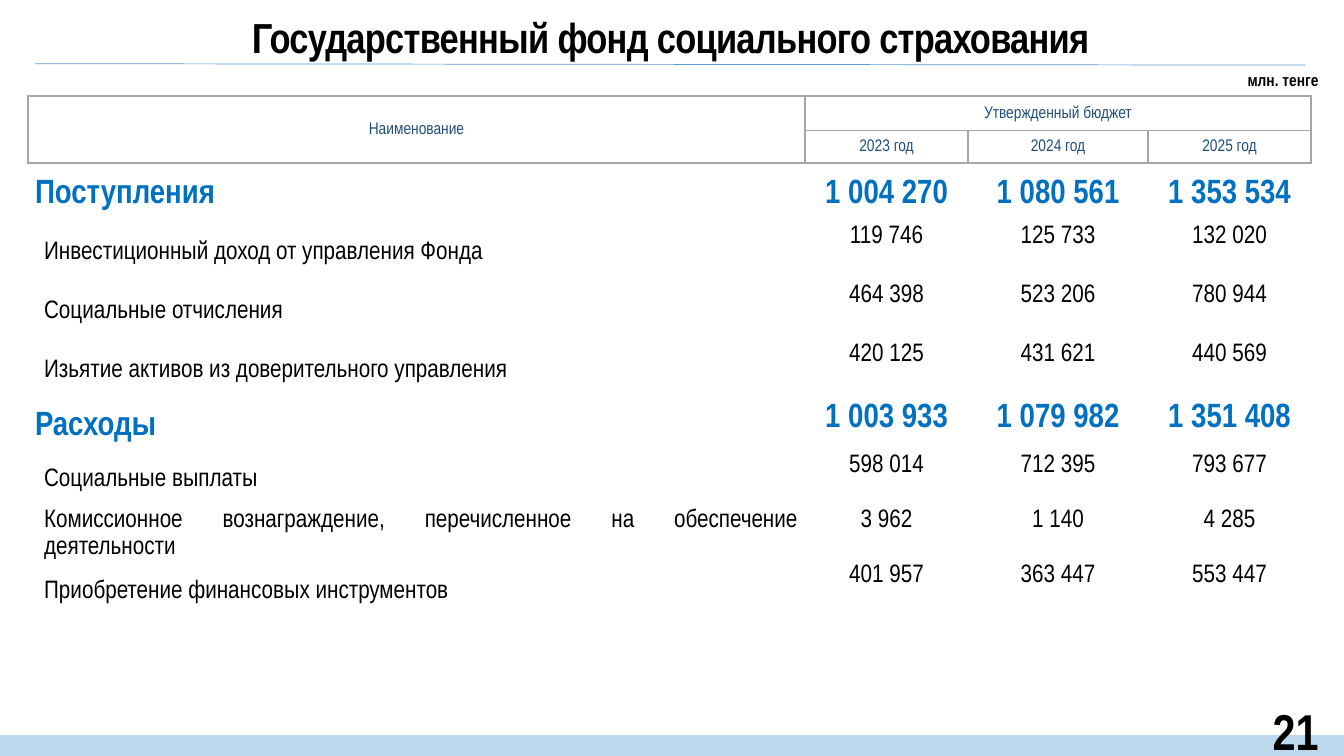
from dataclasses import dataclass
from lxml.etree import SubElement
from pptx import Presentation
from pptx.dml.color import RGBColor
from pptx.enum.shapes import MSO_CONNECTOR, MSO_SHAPE
from pptx.enum.text import MSO_ANCHOR, MSO_AUTO_SIZE, PP_ALIGN
from pptx.oxml import parse_xml
from pptx.oxml.ns import nsdecls, qn
from pptx.util import Pt


@dataclass(frozen=True)
class Theme:
    font: str = "Arial Narrow"
    text: str = "000000"
    accent: str = "0070C0"
    header: str = "1F4E79"
    border: str = "A6A6A6"
    rule: str = "5B9BD5"
    band: str = "BDD7EE"
    page_size: int = 36
    title_size: int = 30
    total_size: int = 24
    body_size: int = 18
    small_size: int = 12


class SlideBuilder:
    def __init__(self, slide, theme):
        self.slide = slide
        self.theme = theme

    def format_text(self, text_frame, size, color, bold, align, line_spacing=None):
        paragraph = text_frame.paragraphs[0]
        paragraph.alignment = align
        if line_spacing:
            paragraph.line_spacing = line_spacing
        for run in paragraph.runs:
            run.font.name = self.theme.font
            run.font.size = Pt(size)
            run.font.bold = bold
            run.font.color.rgb = RGBColor.from_string(color)

    def fill_frame(self, shape, text, size, align, line_spacing=None):
        text_frame = shape.text_frame
        text_frame.text = text
        text_frame.word_wrap = True
        text_frame.auto_size = MSO_AUTO_SIZE.NONE
        text_frame.vertical_anchor = MSO_ANCHOR.MIDDLE
        self.format_text(text_frame, size, self.theme.text, True, align, line_spacing)

    def title(self, text, left, top, width, height):
        shape = self.slide.shapes.title
        shape.left, shape.top, shape.width, shape.height = map(Pt, (left, top, width, height))
        self.fill_frame(shape, text, self.theme.title_size, PP_ALIGN.CENTER, 1.1)
        for run in shape.text_frame.paragraphs[0].runs:
            run.font._element.set("spc", "-50")

    def label(self, text, left, top, width, height, size, line_spacing=None):
        shape = self.slide.shapes.add_textbox(*map(Pt, (left, top, width, height)))
        self.fill_frame(shape, text, size, PP_ALIGN.RIGHT, line_spacing)

    def band(self, left, top, width, height):
        shape = self.slide.shapes.add_shape(
            MSO_SHAPE.RECTANGLE, *map(Pt, (left, top, width, height)))
        shape.shadow.inherit = False
        shape.fill.solid()
        shape.fill.fore_color.rgb = RGBColor.from_string(self.theme.band)
        shape.line.fill.background()

    def rule(self, *ends):
        connector = self.slide.shapes.add_connector(MSO_CONNECTOR.STRAIGHT, *map(Pt, ends))
        connector.line.color.rgb = RGBColor.from_string(self.theme.rule)
        connector.line.width = Pt(0.5)
        SubElement(connector._element.spPr, qn("a:effectLst"))

    def table(self, left, top, columns, rows):
        frame = self.slide.shapes.add_table(
            len(rows), len(columns), *map(Pt, (left, top, sum(columns), sum(rows))))
        table = frame.table
        table.first_row = table.horz_banding = False
        for column, width in zip(table.columns, columns):
            column.width = Pt(width)
        for row, height in zip(table.rows, rows):
            row.height = Pt(height)
        return table

    def cell(self, cell, text, size, color, bold, align, anchor, margins,
             line_spacing=None, sides=""):
        cell.text = text
        cell.vertical_anchor = anchor
        (cell.margin_left, cell.margin_top,
         cell.margin_right, cell.margin_bottom) = map(Pt, margins)
        cell.fill.background()
        self.format_text(cell.text_frame, size, color, bold, align, line_spacing)
        # Sides without a border get an explicit empty line
        properties = cell._tc.get_or_add_tcPr()
        for index, side in enumerate("LRTB"):
            paint = (f'<a:solidFill><a:srgbClr val="{self.theme.border}"/></a:solidFill>'
                     if side in sides else "<a:noFill/>")
            properties.insert(index, parse_xml(
                f'<a:ln{side} {nsdecls("a")} w="{Pt(1)}">{paint}</a:ln{side}>'))

    def header_rows(self, table, rows):
        for row_index, row in enumerate(rows):
            for column_index, text in enumerate(row):
                self.cell(table.cell(row_index, column_index), text,
                          self.theme.small_size, self.theme.header, False,
                          PP_ALIGN.CENTER, MSO_ANCHOR.MIDDLE,
                          (0.7, 0.7, 0.7, 0), sides="LRTB")
        table.cell(0, 0).merge(table.cell(1, 0))
        table.cell(0, 1).merge(table.cell(0, 3))

    def budget_rows(self, table, rows, first_row):
        for row_index, (is_total, *texts) in enumerate(rows, first_row):
            size = self.theme.total_size if is_total else self.theme.body_size
            color = self.theme.accent if is_total else self.theme.text
            is_first = row_index == first_row
            for column_index, text in enumerate(texts):
                is_name = column_index == 0
                indent = 11.5 if is_name and not is_total else 5
                self.cell(table.cell(row_index, column_index), text, size, color, is_total,
                          PP_ALIGN.JUSTIFY if is_name else PP_ALIGN.CENTER,
                          MSO_ANCHOR.MIDDLE if is_name or is_first else MSO_ANCHOR.TOP,
                          (indent, 0, 5, 0), 1.15, "T" if is_first else "")


HEADER = [
    ("Наименование", "Утвержденный бюджет", "", ""),
    ("", "2023 год", "2024 год", "2025 год"),
]
BUDGET = [
    (True, "Поступления", "1 004 270", "1 080 561", "1 353 534"),
    (False, "Инвестиционный доход от управления Фонда", "119 746", "125 733", "132 020"),
    (False, "Социальные отчисления", "464 398", "523 206", "780 944"),
    (False, "Изьятие активов из доверительного управления", "420 125", "431 621", "440 569"),
    (True, "Расходы", "1 003 933", "1 079 982", "1 351 408"),
    (False, "Социальные выплаты", "598 014", "712 395", "793 677"),
    (False, "Комиссионное вознаграждение, перечисленное на обеспечение деятельности",
     "3 962", "1 140", "4 285"),
    (False, "Приобретение финансовых инструментов", "401 957", "363 447", "553 447"),
]
COLUMNS = (555, 116.5, 128.5, 116.5)
ROWS = (25, 23, 42, 42, 42, 42, 37.5, 39.5, 36.5, 42)


def main():
    presentation = Presentation()
    presentation.slide_width, presentation.slide_height = Pt(960), Pt(540)
    slide = presentation.slides.add_slide(presentation.slide_layouts[5])
    theme = Theme()
    builder = SlideBuilder(slide, theme)

    # Footer band and page number
    builder.band(0, 525, 960, 15)
    builder.label("21", 846, 507.5, 103, 29, theme.page_size)

    # Heading
    builder.title("Государственный фонд социального страхования", -1, 0, 960, 49)

    # Budget table
    table = builder.table(20, 68.5, COLUMNS, ROWS)
    builder.header_rows(table, HEADER)
    builder.budget_rows(table, BUDGET, len(HEADER))

    # Unit note and rule under the heading
    builder.label("млн. тенге", 862.5, 39, 86.5, 34.5, theme.small_size, 1.1)
    builder.rule(25, 45.5, 932.5, 46.5)

    presentation.save("out.pptx")


if __name__ == "__main__":
    main()
